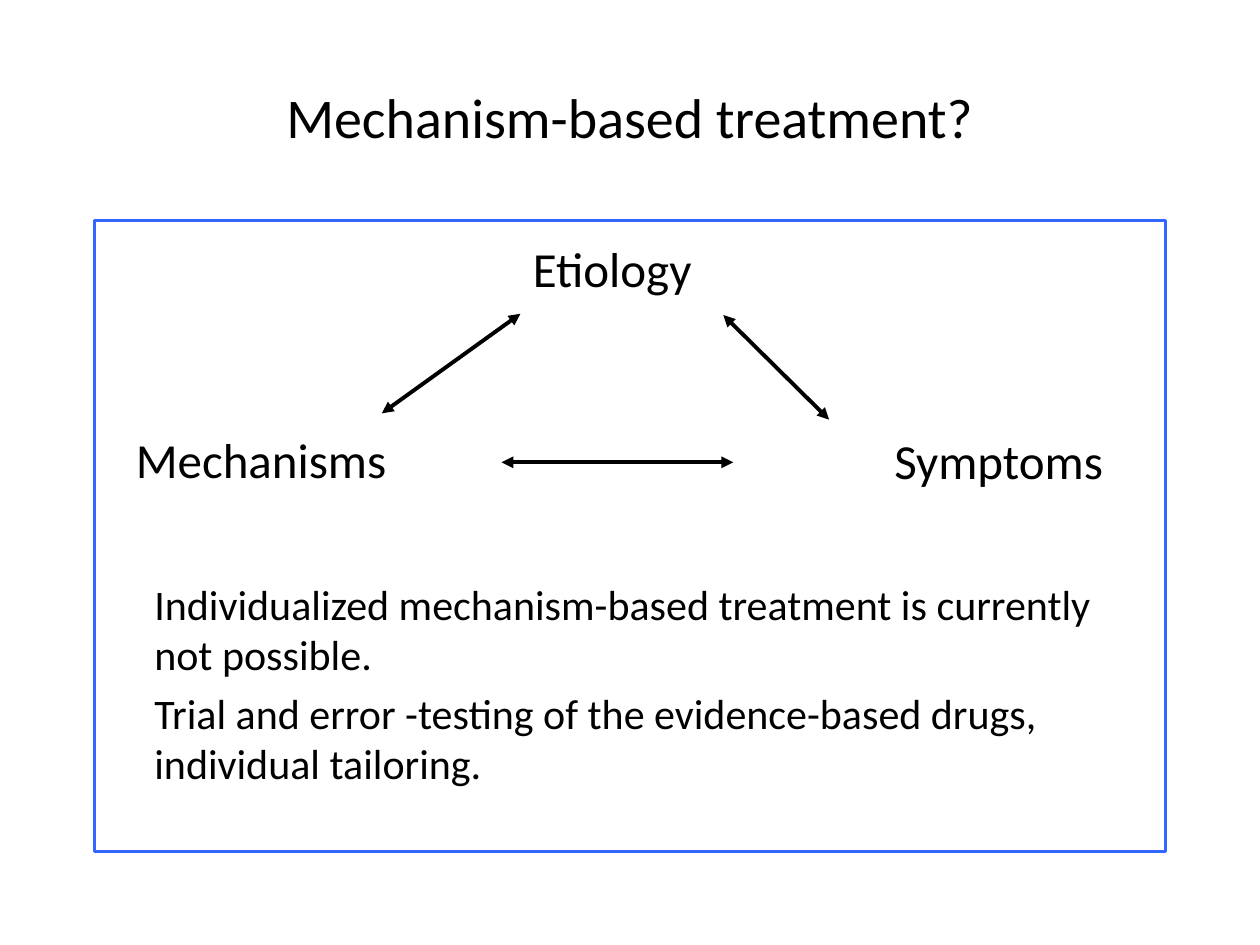
"""Build the slide on mechanism-based treatment."""
from lxml.etree import SubElement
from pptx import Presentation
from pptx.dml.color import RGBColor
from pptx.enum.shapes import MSO_CONNECTOR, MSO_SHAPE
from pptx.enum.text import MSO_ANCHOR, PP_ALIGN
from pptx.oxml.ns import qn
from pptx.util import Pt

BLACK = RGBColor(0x00, 0x00, 0x00)
BLUE = RGBColor(0x33, 0x66, 0xFF)


def write(shape, text, size, align=PP_ALIGN.LEFT, anchor=MSO_ANCHOR.TOP, wrap=True, gap=0):
    frame = shape.text_frame
    frame.word_wrap = wrap
    frame.vertical_anchor = anchor
    frame.text = text
    for i, para in enumerate(frame.paragraphs):
        para.alignment = align
        para.space_before = Pt(gap if i else 0)
        para.font.name = "Calibri"
        para.font.size = Pt(size)
        para.font.color.rgb = BLACK


deck = Presentation()
deck.slide_width, deck.slide_height = Pt(720), Pt(540)
slide = deck.slides.add_slide(deck.slide_layouts[6])
shapes = slide.shapes

title = shapes.add_textbox(Pt(36), Pt(25.2), Pt(648), Pt(82))
write(title, "Mechanism-based treatment?", 32, align=PP_ALIGN.CENTER, anchor=MSO_ANCHOR.MIDDLE)

panel = shapes.add_shape(MSO_SHAPE.RECTANGLE, Pt(54), Pt(126), Pt(612), Pt(360.7))
panel.shadow.inherit = False
panel.fill.background()
panel.line.color.rgb = BLUE
panel.line.width = Pt(1.75)
panel.text_frame.margin_left = Pt(34.2)
panel.text_frame.margin_top = Pt(204.5)
notes = [
    "Individualized mechanism-based treatment is currently not possible.",
    "Trial and error -testing of the evidence-based drugs, individual tailoring.",
]
write(panel, "\n".join(notes), 24, gap=4.8)

arrows = [
    (297.4, 179.3, 218.2, 236.2),
    (413.3, 180, 473.8, 239.8),
    (286.6, 264.2, 419, 264.2),
]
for ends in arrows:
    arrow = shapes.add_connector(MSO_CONNECTOR.STRAIGHT, *map(Pt, ends))
    arrow.line.color.rgb = BLACK
    arrow.line.width = Pt(2.25)
    for tag in ("a:headEnd", "a:tailEnd"):
        SubElement(arrow.line._get_or_add_ln(), qn(tag), type="triangle")
    SubElement(arrow._element.spPr, qn("a:effectLst"))

labels = [
    ("Etiology", 297.4, 132.5, 114.5),
    ("Mechanisms", 70.6, 241.9, 172),
    ("Symptoms", 504, 242.6, 147),
]
for text, left, top, width in labels:
    label = shapes.add_textbox(Pt(left), Pt(top), Pt(width), Pt(41))
    write(label, text, 28, wrap=False)

deck.save("out.pptx")
